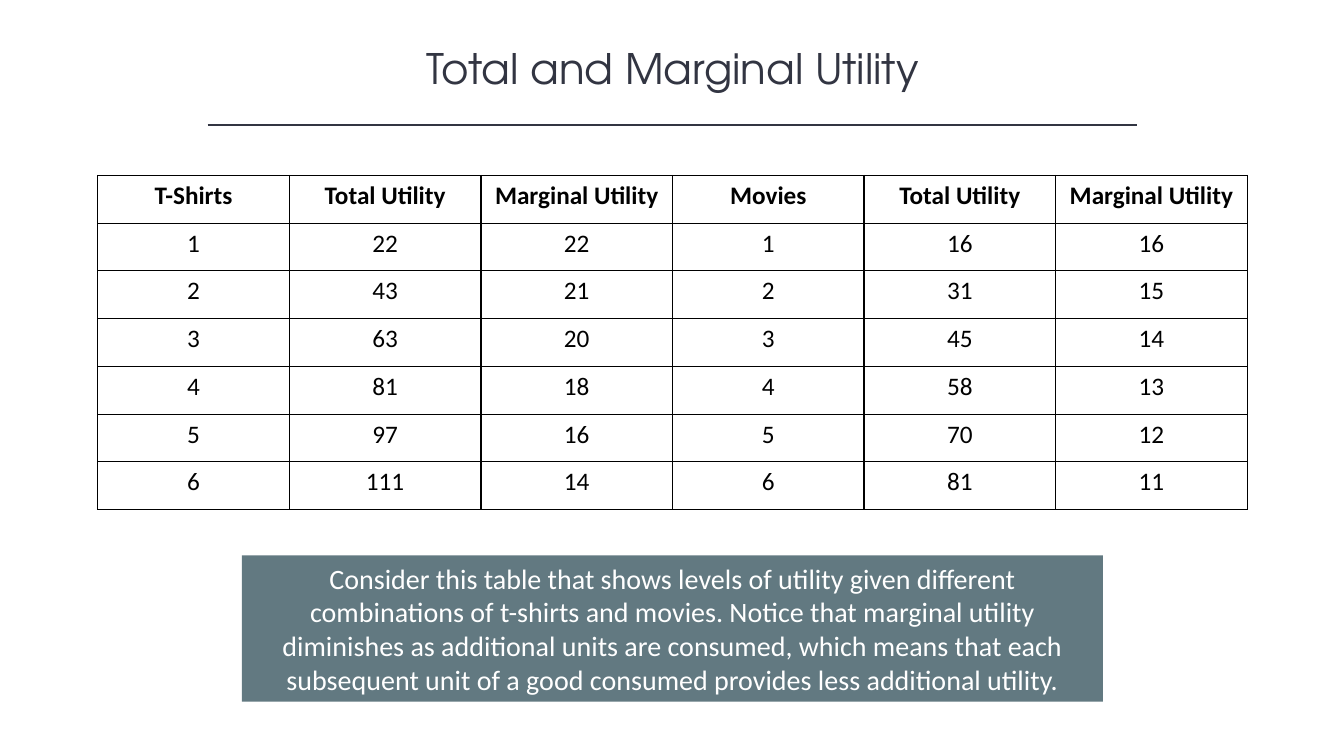
from lxml import etree
from pptx import Presentation
from pptx.dml.color import RGBColor
from pptx.enum.shapes import MSO_CONNECTOR, MSO_SHAPE
from pptx.enum.text import MSO_ANCHOR, PP_ALIGN
from pptx.oxml.ns import qn
from pptx.util import Inches, Pt

TITLE = "Total and Marginal Utility"
HEADS = ("T-Shirts", "Total Utility", "Marginal Utility",
         "Movies", "Total Utility", "Marginal Utility")
ROWS = [
    (1, 22, 22, 1, 16, 16),
    (2, 43, 21, 2, 31, 15),
    (3, 63, 20, 3, 45, 14),
    (4, 81, 18, 4, 58, 13),
    (5, 97, 16, 5, 70, 12),
    (6, 111, 14, 6, 81, 11),
]
NOTE = ("Consider this table that shows levels of utility given different "
        "combinations of t-shirts and movies. Notice that marginal utility "
        "diminishes as additional units are consumed, which means that each "
        "subsequent unit of a good consumed provides less additional utility.")

INK = RGBColor(0x32, 0x35, 0x42)
SLATE = RGBColor(0x62, 0x79, 0x81)
BLACK = RGBColor(0, 0, 0)
WHITE = RGBColor(0xFF, 0xFF, 0xFF)
CENTER = PP_ALIGN.CENTER
MIDDLE = MSO_ANCHOR.MIDDLE
RECT = MSO_SHAPE.RECTANGLE
STRAIGHT = MSO_CONNECTOR.STRAIGHT

COL_W, ROW_H = 1.9, 0.474


def write(frame, text, size, color, face="Calibri", bold=False):
    """Put one centred paragraph into a text frame."""
    frame.text = text
    para = frame.paragraphs[0]
    para.alignment = CENTER
    font = para.font
    font.name, font.size, font.bold = face, Pt(size), bold
    font.color.rgb = color


def edge(cell):
    """Draw a thin black border on all four sides of a cell."""
    props = cell._tc.get_or_add_tcPr()
    for spot, side in enumerate(("a:lnL", "a:lnR", "a:lnT", "a:lnB")):
        line = etree.Element(qn(side), w=str(Pt(1)))
        fill = etree.SubElement(line, qn("a:solidFill"))
        etree.SubElement(fill, qn("a:srgbClr"), val=str(BLACK))
        props.insert(spot, line)


def add_title(slide):
    """Place the title and the rule below it."""
    title = slide.shapes.title
    title.left, title.top = Inches(1.67), Inches(0.37)
    title.width, title.height = Inches(10), Inches(0.61)
    write(title.text_frame, TITLE, 30, INK, "TeX Gyre Adventor")
    title.text_frame.vertical_anchor = MIDDLE
    rule = slide.shapes.add_connector(
        STRAIGHT, Inches(2.06), Inches(1.24), Inches(11.28), Inches(1.24))
    rule.line.color.rgb = INK
    rule.line.width = Pt(1)
    etree.SubElement(rule._element.spPr, qn("a:effectLst"))


def add_grid(slide):
    """Build the utility table."""
    data = [HEADS, *ROWS]
    table = slide.shapes.add_table(
        len(data), len(HEADS), Inches(0.97), Inches(1.74),
        Inches(COL_W * len(HEADS)), Inches(ROW_H * len(data))).table
    table.horz_banding = False
    for col in table.columns:
        col.width = Inches(COL_W)
    for r, row in enumerate(data):
        table.rows[r].height = Inches(ROW_H)
        for c, value in enumerate(row):
            cell = table.cell(r, c)
            cell.fill.solid()
            cell.fill.fore_color.rgb = WHITE
            write(cell.text_frame, str(value), 18, BLACK, bold=r == 0)
            edge(cell)


def add_note(slide):
    """Add the filled box with the comment."""
    box = slide.shapes.add_shape(
        RECT, Inches(2.4), Inches(5.51), Inches(8.54), Inches(1.45))
    box.shadow.inherit = False
    box.fill.solid()
    box.fill.fore_color.rgb = SLATE
    box.line.fill.background()
    box.text_frame.word_wrap = True
    box.text_frame.vertical_anchor = MIDDLE
    write(box.text_frame, NOTE, 20, WHITE)


def main():
    """Build the slide and save it."""
    deck = Presentation()
    deck.slide_width, deck.slide_height = Inches(13.33), Inches(7.5)
    slide = deck.slides.add_slide(deck.slide_layouts.get_by_name("Title Only"))
    add_title(slide)
    add_grid(slide)
    add_note(slide)
    deck.save("out.pptx")


if __name__ == "__main__":
    main()
